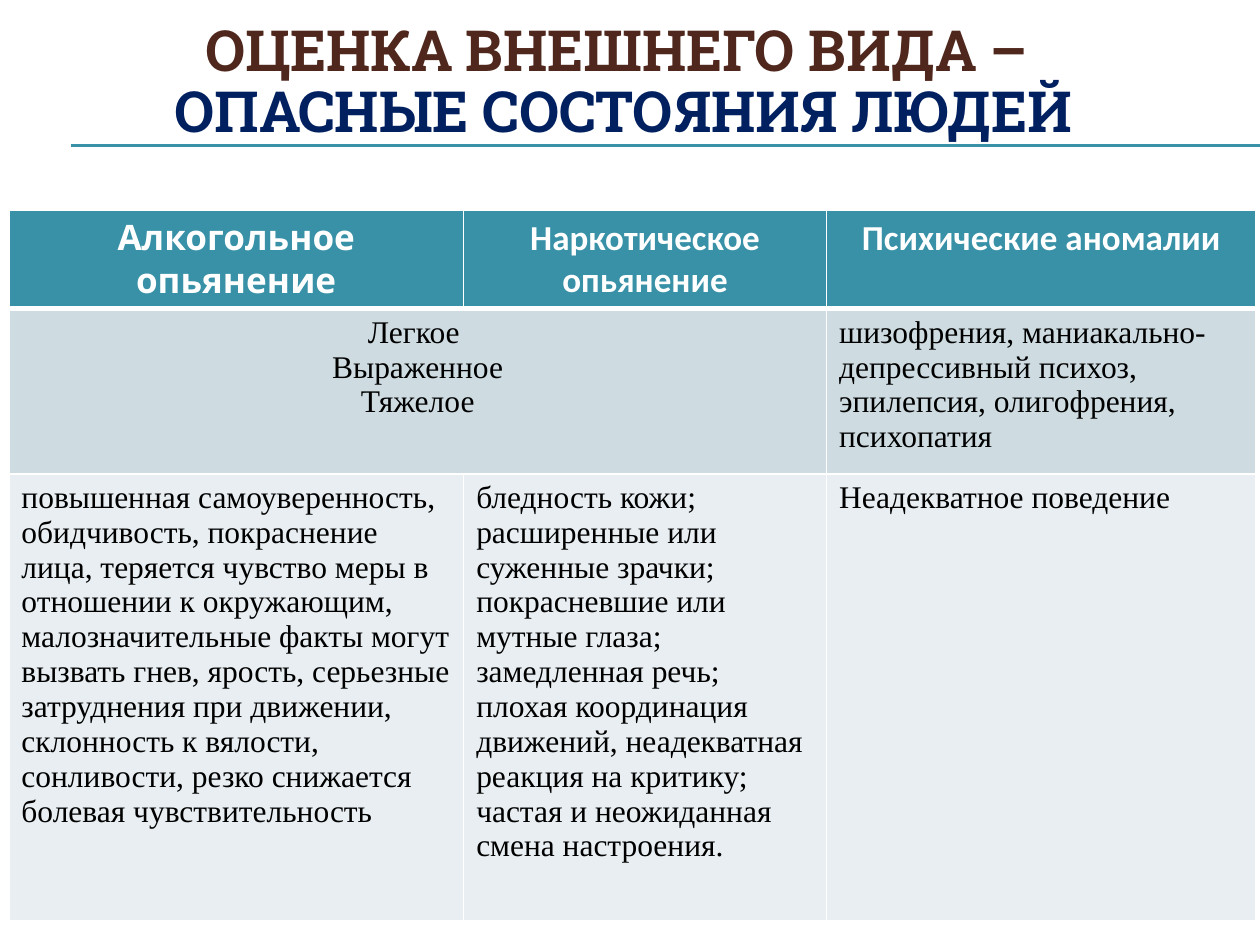
from dataclasses import dataclass

from lxml.etree import SubElement
from pptx import Presentation
from pptx.dml.color import RGBColor
from pptx.enum.shapes import MSO_CONNECTOR
from pptx.enum.text import MSO_ANCHOR, MSO_AUTO_SIZE, PP_ALIGN
from pptx.oxml.ns import qn
from pptx.util import Inches, Pt

TEAL = RGBColor(0x38, 0x91, 0xA7)
BROWN = RGBColor(0x4F, 0x27, 0x1C)
NAVY = RGBColor(0x00, 0x20, 0x60)
WHITE = RGBColor(0xFF, 0xFF, 0xFF)
BLACK = RGBColor(0x00, 0x00, 0x00)
BAND_DARK = RGBColor(0xCE, 0xDC, 0xE1)
BAND_LIGHT = RGBColor(0xE8, 0xEE, 0xF1)

COLUMN_WIDTHS = (3.61, 2.88, 3.41)
ROW_HEIGHTS = (0.77, 1.31, 3.55)


@dataclass
class CellStyle:
    fill: RGBColor
    color: RGBColor = BLACK
    font: str = "Times New Roman"
    size: float = 18
    bold: bool = False
    align: PP_ALIGN = PP_ALIGN.LEFT
    bottom_border: float = 1


@dataclass
class CellContent:
    row: int
    column: int
    text: str
    style: CellStyle


def header(font: str) -> CellStyle:
    return CellStyle(TEAL, WHITE, font, 20, True, PP_ALIGN.CENTER, 3)


DEGREES = CellStyle(BAND_DARK, align=PP_ALIGN.CENTER)
DISORDERS = CellStyle(BAND_DARK)
SIGNS = CellStyle(BAND_LIGHT)

CONTENTS = (
    CellContent(0, 0, "Алкогольное опьянение", header("Cabin")),
    CellContent(0, 1, "Наркотическое опьянение", header("Calibri")),
    CellContent(0, 2, "Психические аномалии", header("Calibri")),
    CellContent(1, 0, "Легкое \nВыраженное\nТяжелое", DEGREES),
    CellContent(1, 2, "шизофрения, маниакально-депрессивный психоз, эпилепсия, "
                "олигофрения, психопатия", DISORDERS),
    CellContent(2, 0, "повышенная самоуверенность, обидчивость, покраснение лица, "
                "теряется чувство меры в отношении к окружающим, малозначительные "
                "факты могут вызвать гнев, ярость, серьезные затруднения при "
                "движении, склонность к вялости, сонливости, резко снижается "
                "болевая чувствительность", SIGNS),
    CellContent(2, 1, "бледность кожи;\nрасширенные или суженные зрачки;\n"
                "покрасневшие или мутные глаза;\nзамедленная речь;\n"
                "плохая координация движений, неадекватная реакция на критику;\n"
                "частая и неожиданная смена настроения.", SIGNS),
    CellContent(2, 2, "Неадекватное поведение", SIGNS),
)


def draw_rule(slide, y: float) -> None:
    rule = slide.shapes.add_connector(
        MSO_CONNECTOR.STRAIGHT, Inches(0.56), Inches(y), Inches(10), Inches(y))
    rule.line.color.rgb = TEAL
    rule.line.width = Pt(0.75)
    SubElement(rule._element.spPr, qn("a:effectLst"))


def set_borders(cell, bottom: float) -> None:
    properties = cell._tc.get_or_add_tcPr()
    for side, width in (("L", 1), ("R", 1), ("T", 1), ("B", bottom)):
        border = SubElement(properties, qn(f"a:ln{side}"), w=str(Pt(width)))
        fill = SubElement(border, qn("a:solidFill"))
        SubElement(fill, qn("a:srgbClr"), val=str(WHITE))


def fill_cell(table, content: CellContent) -> None:
    cell, style = table.cell(content.row, content.column), content.style
    cell.text_frame.text = content.text
    for paragraph in cell.text_frame.paragraphs:
        paragraph.alignment = style.align
        for run in paragraph.runs:
            run.font.name = style.font
            run.font.size = Pt(style.size)
            run.font.bold = style.bold
            run.font.color.rgb = style.color
    set_borders(cell, style.bottom_border)
    cell.fill.solid()
    cell.fill.fore_color.rgb = style.fill


def write_title(slide) -> None:
    title = slide.shapes.title
    title.left, title.top = Inches(0.2), Inches(0.09)
    title.width, title.height = Inches(9.5), Inches(1.15)
    frame = title.text_frame
    frame.word_wrap = True
    frame.auto_size = MSO_AUTO_SIZE.NONE
    frame.vertical_anchor = MSO_ANCHOR.MIDDLE
    heading = frame.paragraphs[0]
    heading.text = "ОЦЕНКА ВНЕШНЕГО ВИДА – \vОПАСНЫЕ СОСТОЯНИЯ ЛЮДЕЙ"
    heading.alignment = PP_ALIGN.CENTER
    heading.line_spacing = 0.9
    for run, color in zip(heading.runs, (BROWN, NAVY)):
        run.font.name = "Roboto Slab"
        run.font.size = Pt(32.4)
        run.font.bold = True
        run.font.color.rgb = color


def draw_table(slide) -> None:
    table = slide.shapes.add_table(
        len(ROW_HEIGHTS), len(COLUMN_WIDTHS), Inches(0.07), Inches(1.67),
        Inches(sum(COLUMN_WIDTHS)), Inches(sum(ROW_HEIGHTS))).table
    for column, width in zip(table.columns, COLUMN_WIDTHS):
        column.width = Inches(width)
    for row, height in zip(table.rows, ROW_HEIGHTS):
        row.height = Inches(height)
    # Degrees of intoxication apply to both of the first two columns
    table.cell(1, 0).merge(table.cell(1, 1))
    for content in CONTENTS:
        fill_cell(table, content)


def main() -> None:
    presentation = Presentation()
    presentation.slide_width, presentation.slide_height = Inches(10), Inches(7.5)
    slide = presentation.slides.add_slide(presentation.slide_layouts[5])

    # Double rule behind the title
    for y in (1.15, 1.16):
        draw_rule(slide, y)
    # The title placeholder goes in front of the rules
    slide.shapes._spTree.append(slide.shapes.title._element)
    write_title(slide)
    draw_table(slide)
    presentation.save("out.pptx")


if __name__ == "__main__":
    main()
